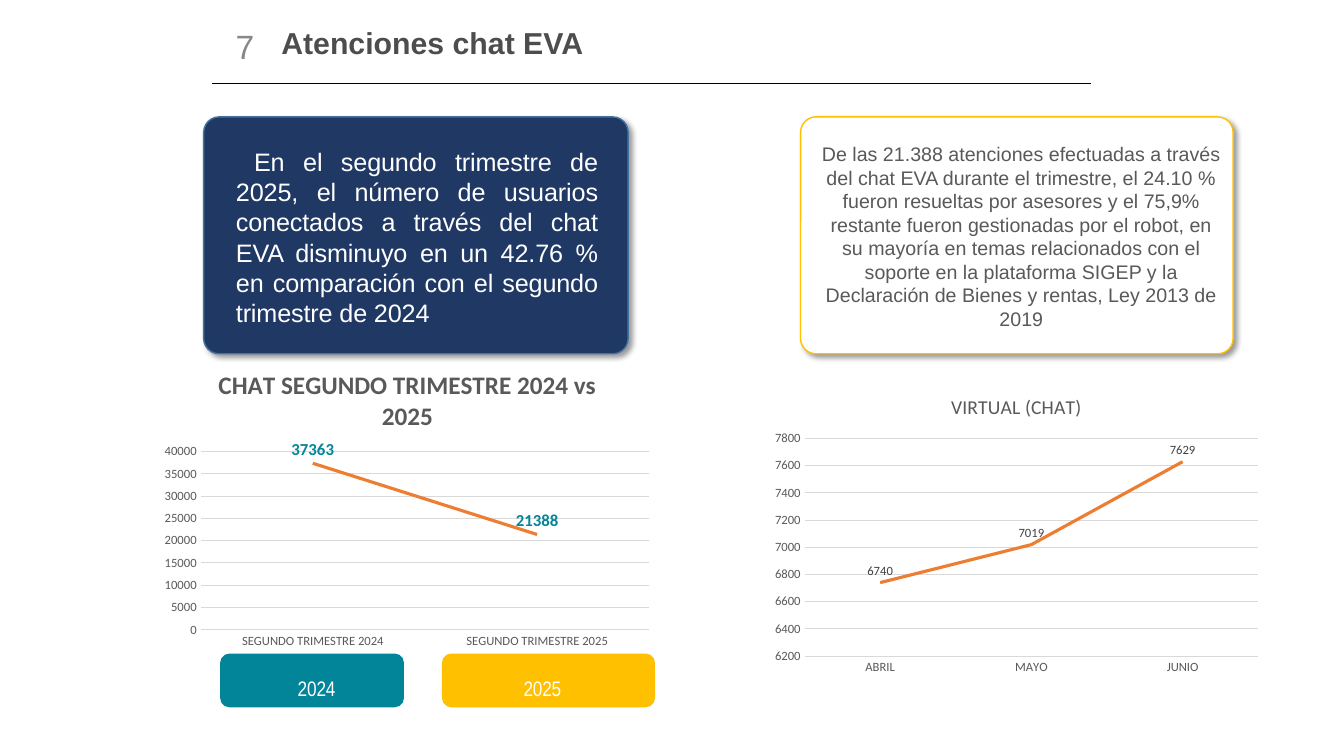
"""Build the slide on EVA chat attention, with two cards and two line charts."""
from dataclasses import dataclass

from lxml.etree import SubElement
from pptx import Presentation
from pptx.chart.data import CategoryChartData
from pptx.dml.color import RGBColor
from pptx.enum.chart import XL_CHART_TYPE as ChartType
from pptx.enum.chart import XL_LABEL_POSITION as LabelPosition
from pptx.enum.chart import XL_TICK_MARK as TickMark
from pptx.enum.shapes import MSO_CONNECTOR as Connector
from pptx.enum.shapes import MSO_SHAPE as ShapeType
from pptx.enum.text import MSO_ANCHOR as Anchor
from pptx.enum.text import MSO_AUTO_SIZE as AutoSize
from pptx.enum.text import PP_ALIGN as Align
from pptx.oxml import parse_xml
from pptx.oxml.ns import nsdecls, qn
from pptx.slide import Slide
from pptx.util import Emu, Inches, Pt


@dataclass(frozen=True)
class Theme:
    """Colours, fonts and type sizes of the slide."""
    black: str = "000000"
    white: str = "FFFFFF"
    title: str = "4D4D4D"
    number: str = "888888"
    text: str = "595959"
    label: str = "404040"
    grid: str = "D9D9D9"
    navy: str = "203864"
    navy_edge: str = "43739E"
    teal: str = "028598"
    gold: str = "FFC000"
    orange: str = "ED7D31"
    font: str = "Arial"
    narrow_font: str = "Arial Narrow"
    chart_font: str = "Calibri"
    title_size: float = 21.6
    number_size: float = 24
    lead_size: float = 18
    body_size: float = 14
    button_size: float = 15
    axis_size: float = 9


THEME = Theme()


@dataclass(frozen=True)
class Box:
    """A rectangle in inches."""
    left: float
    top: float
    width: float
    height: float

    def lengths(self) -> tuple[Emu, ...]:
        """Return the rectangle as slide lengths."""
        return tuple(map(Inches, (self.left, self.top, self.width, self.height)))


@dataclass(frozen=True)
class Panel:
    """A rounded rectangle with the text laid over it."""
    box: Box
    fill: str
    edge: str
    text_box: Box
    text: str
    size: float
    color: str
    font: str = THEME.font
    align: Align = Align.CENTER
    first_indent: float = 0
    spacing: int = 0
    is_card: bool = False


@dataclass(frozen=True)
class LineChart:
    """A line chart with one series and its value scale."""
    box: Box
    plot: Box
    title: str
    title_size: float
    title_bold: bool
    series: str
    points: dict[str, int]
    scale: tuple[int, int, int]
    label_size: float
    label_color: str
    label_bold: bool


PANELS = (
    Panel(Box(7.94, 1.16, 4.29, 2.35), THEME.white, THEME.gold, Box(8.12, 1.39, 4, 1.9),
          "De las 21.388 atenciones efectuadas a través del chat EVA durante el trimestre, "
          "el 24.10 % fueron resueltas por asesores y el 75,9% restante fueron gestionadas "
          "por el robot, en su mayoría en temas relacionados con el soporte en la plataforma "
          "SIGEP y la Declaración de Bienes y rentas, Ley 2013 de 2019",
          THEME.body_size, THEME.text, is_card=True),
    Panel(Box(2.19, 6.49, 1.81, 0.52), THEME.teal, THEME.teal, Box(2.32, 6.68, 1.62, 0.27),
          "2024", THEME.button_size, THEME.white, THEME.narrow_font, spacing=-10),
    Panel(Box(4.39, 6.49, 2.1, 0.52), THEME.gold, THEME.gold, Box(4.65, 6.68, 1.44, 0.27),
          "2025", THEME.button_size, THEME.white, THEME.narrow_font, spacing=-10),
    Panel(Box(2.02, 1.16, 4.21, 2.35), THEME.navy, THEME.navy_edge, Box(2.32, 1.43, 3.61, 1.84),
          "En el segundo trimestre de 2025, el número de usuarios conectados a través del "
          "chat EVA disminuyo en un 42.76 % en comparación con el segundo trimestre de 2024",
          THEME.lead_size, THEME.white, align=Align.JUSTIFY, first_indent=0.18,
          spacing=-10, is_card=True),
)

CHARTS = (
    LineChart(Box(7.58, 3.75, 5, 3), Box(0.08, 0.2, 0.9, 0.72), "VIRTUAL (CHAT)", 14, False,
              "VIRTUAL (CHAT)", {"ABRIL": 6740, "MAYO": 7019, "JUNIO": 7629},
              (6200, 7800, 200), 9, THEME.label, False),
    LineChart(Box(1.54, 3.49, 5, 3), Box(0.09, 0.33, 0.89, 0.59),
              "CHAT SEGUNDO TRIMESTRE 2024 vs 2025", 18, True, "Series 1",
              {"SEGUNDO TRIMESTRE 2024": 37363, "SEGUNDO TRIMESTRE 2025": 21388},
              (0, 40000, 5000), 12, THEME.teal, True),
)


def style_font(font, size: float, color: str, name: str, bold: bool = False) -> None:
    """Set the size, colour, typeface and weight of a font."""
    font.size, font.name, font.bold = Pt(size), name, bold
    font.color.rgb = RGBColor.from_string(color)


def style_line(line, color: str, width: float) -> None:
    """Set the colour and width of a line."""
    line.color.rgb = RGBColor.from_string(color)
    line.width = Pt(width)


def add_heading(slide: Slide) -> None:
    """Add the title, its number and the rule below them."""
    rule = slide.shapes.add_connector(
        Connector.STRAIGHT, Inches(2.1), Inches(0.83), Inches(10.82), Inches(0.83))
    style_line(rule.line, THEME.black, 1)
    SubElement(rule._element.spPr, qn("a:effectLst"))
    title = slide.shapes.title
    title.left, title.top, title.width, title.height = Box(2.69, 0.26, 8.13, 0.37).lengths()
    number = slide.shapes.add_textbox(*Box(2.09, 0.25, 0.68, 0.58).lengths())
    for shape, text, align, size, color, bold in (
            (title, "Atenciones chat EVA", Align.LEFT, THEME.title_size, THEME.title, True),
            (number, "7", Align.CENTER, THEME.number_size, THEME.number, False)):
        frame = shape.text_frame
        frame.text, frame.word_wrap, frame.auto_size = text, True, AutoSize.NONE
        paragraph = frame.paragraphs[0]
        paragraph.alignment, paragraph.line_spacing = align, 0.9
        style_font(paragraph.runs[0].font, size, color, THEME.font, bold)
    title.text_frame.vertical_anchor = Anchor.MIDDLE


def add_panel(slide: Slide, panel: Panel) -> None:
    """Add a rounded rectangle and its text."""
    shape = slide.shapes.add_shape(ShapeType.ROUNDED_RECTANGLE, *panel.box.lengths())
    shape.fill.solid()
    shape.fill.fore_color.rgb = RGBColor.from_string(panel.fill)
    style_line(shape.line, panel.edge, 1)
    shape.shadow.inherit = False
    if panel.is_card:
        shape.adjustments[0] = 0.065
        shape._element.spPr.find(qn("a:effectLst")).append(parse_xml(
            f'<a:outerShdw {nsdecls("a")} blurRad="{Pt(4)}" dist="{Pt(3)}" dir="2700000">'
            f'<a:srgbClr val="{THEME.black}"><a:alpha val="40000"/></a:srgbClr></a:outerShdw>'))
    frame = slide.shapes.add_textbox(*panel.text_box.lengths()).text_frame
    frame.text, frame.word_wrap = panel.text, True
    frame.auto_size = AutoSize.SHAPE_TO_FIT_TEXT
    frame.margin_left = frame.margin_right = frame.margin_bottom = 0
    frame.margin_top = Inches(0.02)
    paragraph = frame.paragraphs[0]
    paragraph.alignment = panel.align
    properties = paragraph._p.get_or_add_pPr()
    properties.set("marL", str(Inches(0.02)))
    properties.set("indent", str(Inches(panel.first_indent)))
    run = paragraph.runs[0]
    style_font(run.font, panel.size, panel.color, panel.font)
    run._r.get_or_add_rPr().set("spc", str(panel.spacing))


def add_line_chart(slide: Slide, item: LineChart) -> None:
    """Add a line chart with value labels."""
    data = CategoryChartData()
    data.categories = list(item.points)
    data.add_series(item.series, list(item.points.values()))
    chart = slide.shapes.add_chart(ChartType.LINE, *item.box.lengths(), data).chart
    style_font(chart.font, 10, THEME.black, THEME.chart_font)
    chart.has_legend = False
    chart.chart_title.text_frame.text = item.title
    style_font(chart.chart_title.text_frame.paragraphs[0].runs[0].font,
               item.title_size, THEME.text, THEME.chart_font, item.title_bold)
    chart.chart_title.include_in_layout = False
    for axis in (chart.category_axis, chart.value_axis):
        axis.major_tick_mark = axis.minor_tick_mark = TickMark.NONE
        style_font(axis.tick_labels.font, THEME.axis_size, THEME.text, THEME.chart_font)
    style_line(chart.category_axis.format.line, THEME.grid, 0.75)
    values = chart.value_axis
    values.minimum_scale, values.maximum_scale, values.major_unit = item.scale
    values.format.line.fill.background()
    style_line(values.major_gridlines.format.line, THEME.grid, 0.75)
    plot = chart.plots[0]
    plot.vary_by_categories = False
    series = plot.series[0]
    series.smooth = False
    style_line(series.format.line, THEME.orange, 2.25)
    labels = series.data_labels
    labels.show_value, labels.position = True, LabelPosition.ABOVE
    style_font(labels.font, item.label_size, item.label_color, THEME.chart_font, item.label_bold)
    area = chart._chartSpace.chart.plotArea
    for old_layout in area.findall(qn("c:layout")):
        area.remove(old_layout)
    area.insert(0, parse_xml(
        f'<c:layout {nsdecls("c")}><c:manualLayout><c:layoutTarget val="inner"/>'
        '<c:xMode val="edge"/><c:yMode val="edge"/>'
        f'<c:x val="{item.plot.left}"/><c:y val="{item.plot.top}"/>'
        f'<c:w val="{item.plot.width}"/><c:h val="{item.plot.height}"/>'
        '</c:manualLayout></c:layout>'))


def main() -> None:
    """Build and save the presentation."""
    presentation = Presentation()
    presentation.slide_width, presentation.slide_height = Inches(13.33), Inches(7.5)
    slide = presentation.slides.add_slide(presentation.slide_layouts[5])
    add_heading(slide)
    for panel in PANELS:
        add_panel(slide, panel)
    for item in CHARTS:
        add_line_chart(slide, item)
    presentation.save("out.pptx")


if __name__ == "__main__":
    main()
